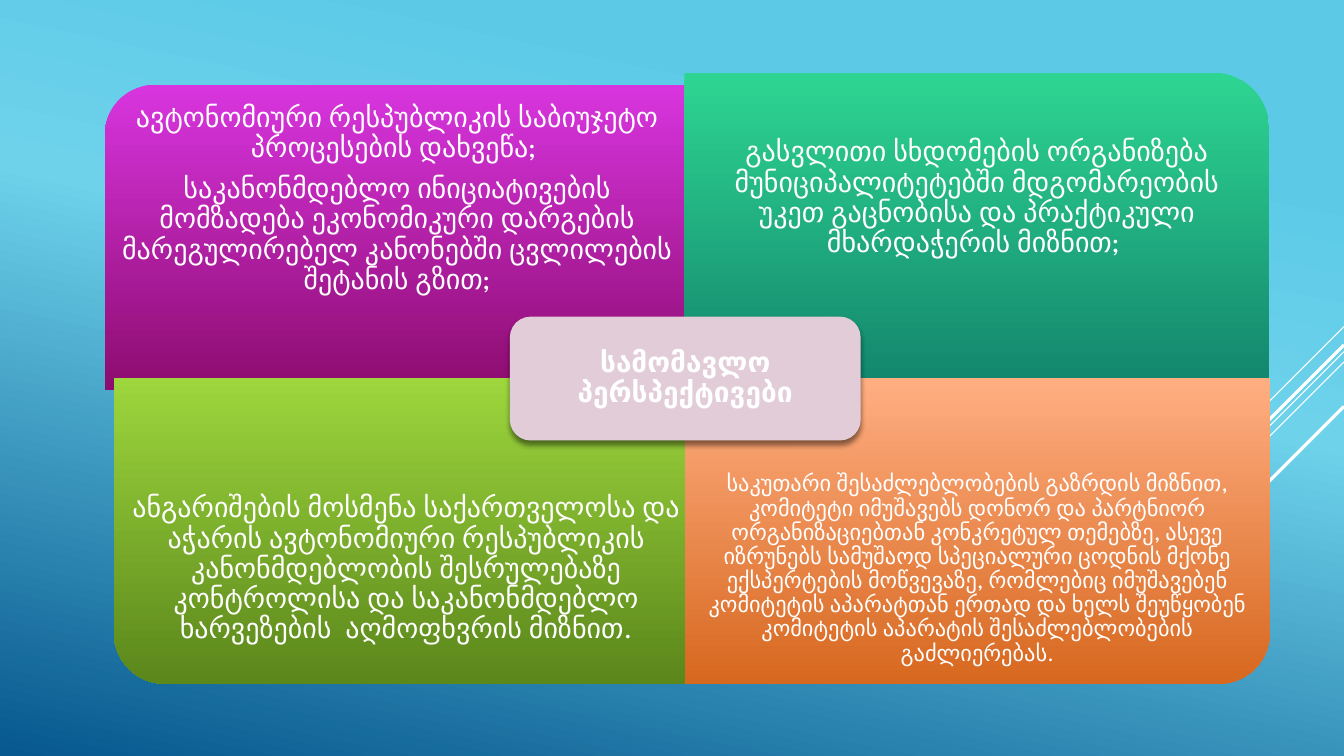
"""Build a slide with four future plans arranged around a central title."""
from copy import deepcopy

from lxml.etree import SubElement
from pptx import Presentation
from pptx.dml.color import RGBColor
from pptx.enum.shapes import MSO_CONNECTOR as Connector, MSO_SHAPE as Shape
from pptx.enum.text import MSO_ANCHOR as Anchor, PP_ALIGN as Align
from pptx.oxml.ns import qn
from pptx.util import Cm, Pt

COLOURS = {
    "white": "FFFFFF", "shadow": "000000", "hub": "E1CCD8",
    "sky": "5CCAE7", "light sky": "6ED2EB", "deep blue": "06588E",
    "magenta": "D835DF", "plum": "8D0C6F",
    "mint": "2ED592", "pine": "11806A",
    "lime": "9DD63D", "olive": "5B871B",
    "peach": "FFAE82", "rust": "D7681F",
}
BACKGROUND = [(0.18, "sky"), (0.43, "light sky"), (1, "deep blue")]
RAYS = [
    (8.23, 2.54, 0.75), (8.86, 8.28, 0.75), (9.12, 5.27, 0.75),
    (8.69, 4.85, 2.25), (10.24, 3.53, 2.25),
]
PLANS = [
    {"box": (2.64, 2.13, 14.73, 7.7), "turn": 270, "colours": ("magenta", "plum"),
     "at_bottom": False, "size": 20, "inset": 0.41, "lines": [
         "ავტონომიური რესპუბლიკის საბიუჯეტო პროცესების დახვეწა; ",
         "საკანონმდებლო ინიციატივების მომზადება ეკონომიკური დარგების "
         "მარეგულირებელ კანონებში ცვლილების შეტანის გზით;"]},
    {"box": (17.25, 1.83, 14.73, 8.43), "turn": 0, "colours": ("mint", "pine"),
     "at_bottom": False, "size": 20, "inset": 0.41, "lines": [
         "გასვლითი სხდომების ორგანიზება მუნიციპალიტეტებში მდგომარეობის "
         "უკეთ გაცნობისა და პრაქტიკული მხარდაჭერის მიზნით; "]},
    {"box": (2.87, 9.53, 14.73, 7.7), "turn": 180, "colours": ("lime", "olive"),
     "at_bottom": True, "size": 20, "inset": 0.41, "lines": [
         "ანგარიშების მოსმენა საქართველოსა და აჭარის ავტონომიური რესპუბლიკის "
         "კანონმდებლობის შესრულებაზე კონტროლისა და საკანონმდებლო "
         "ხარვეზების  აღმოფხვრის მიზნით."]},
    {"box": (17.27, 9.53, 14.73, 7.7), "turn": 90, "colours": ("peach", "rust"),
     "at_bottom": True, "size": 16, "inset": 0.31, "lines": [
         "საკუთარი შესაძლებლობების გაზრდის მიზნით, კომიტეტი იმუშავებს დონორ "
         "და პარტნიორ ორგანიზაციებთან კონკრეტულ თემებზე, ასევე იზრუნებს "
         "სამუშაოდ სპეციალური ცოდნის მქონე ექსპერტების მოწვევაზე, რომლებიც "
         "იმუშავებენ კომიტეტის აპარატთან ერთად და ხელს შეუწყობენ კომიტეტის "
         "აპარატის შესაძლებლობების გაძლიერებას."]},
]
HUB = {"box": (12.85, 7.98, 8.84, 3.12), "lines": ["სამომავლო პერსპექტივები"]}
SLIDE_WIDTH, SLIDE_HEIGHT = 33.87, 19.05
TEXT_SHARE = 0.75


def colour(name):
    return RGBColor.from_string(COLOURS[name])


def apply_format(target, values):
    for name, value in values.items():
        setattr(target, name, value)


def fill_gradient(fill, stops, angle):
    fill.gradient()
    fill.gradient_angle = angle
    first = fill.gradient_stops[0]._gs
    for _ in range(len(stops) - len(fill.gradient_stops)):
        first.addnext(deepcopy(first))
    for stop, (position, name) in zip(fill.gradient_stops, stops):
        stop.position = position
        stop.color.rgb = colour(name)


def write_text(shape, lines, size, inset, bold=False):
    frame = shape.text_frame
    margins = {f"margin_{side}": Cm(inset) for side in ("left", "right", "top", "bottom")}
    apply_format(frame, {"word_wrap": True, "vertical_anchor": Anchor.MIDDLE, **margins})
    for index, line in enumerate(lines):
        paragraph = frame.add_paragraph() if index else frame.paragraphs[0]
        apply_format(paragraph, {"alignment": Align.CENTER, "line_spacing": 0.9,
                                 "space_after": Pt(size * 0.4)})
        run = paragraph.add_run()
        run.text = line
        apply_format(run.font, {"name": "League Spartan", "size": Pt(size), "bold": bold})
        run.font.color.rgb = colour("white")


def add_ray(slide, top, run, width):
    ray = slide.shapes.add_connector(
        Connector.STRAIGHT, Cm(SLIDE_WIDTH), Cm(top), Cm(SLIDE_WIDTH - run), Cm(top + run))
    ray.line.width = Pt(width)
    ray.line.color.rgb = colour("white")
    SubElement(ray._element.spPr, qn("a:effectLst"))


def add_plan(slide, plan):
    left, top, width, height = plan["box"]
    sideways = plan["turn"] % 180 == 90
    shape_width, shape_height = (height, width) if sideways else (width, height)
    panel = slide.shapes.add_shape(
        Shape.ROUND_1_RECTANGLE,
        Cm(left + (width - shape_width) / 2), Cm(top + (height - shape_height) / 2),
        Cm(shape_width), Cm(shape_height))
    panel.rotation = plan["turn"]
    panel.shadow.inherit = False
    panel.line.fill.background()
    fill_gradient(panel.fill, list(zip((0, 1), plan["colours"])), 270)
    panel._element.spPr.find(qn("a:gradFill")).set("rotWithShape", "0")

    text_height = height * TEXT_SHARE
    text_top = top + height - text_height if plan["at_bottom"] else top
    text_box = slide.shapes.add_textbox(Cm(left), Cm(text_top), Cm(width), Cm(text_height))
    write_text(text_box, plan["lines"], plan["size"], plan["inset"])


def add_hub(slide):
    hub = slide.shapes.add_shape(Shape.ROUNDED_RECTANGLE, *map(Cm, HUB["box"]))
    hub.shadow.inherit = False
    hub.fill.solid()
    hub.fill.fore_color.rgb = colour("hub")
    hub.line.fill.background()
    effects = hub._element.spPr.find(qn("a:effectLst"))
    shadow = SubElement(effects, qn("a:outerShdw"), blurRad=str(Pt(4)), dist=str(Pt(3)),
                        dir="5400000", rotWithShape="0")
    tint = SubElement(shadow, qn("a:srgbClr"), val=COLOURS["shadow"])
    SubElement(tint, qn("a:alpha"), val="46000")
    write_text(hub, HUB["lines"], 20, 0.2, bold=True)


def main():
    presentation = Presentation()
    apply_format(presentation, {"slide_width": Cm(SLIDE_WIDTH), "slide_height": Cm(SLIDE_HEIGHT)})
    slide = presentation.slides.add_slide(presentation.slide_layouts[6])
    fill_gradient(slide.background.fill, BACKGROUND, 258)
    for ray in RAYS:
        add_ray(slide, *ray)
    for plan in PLANS:
        add_plan(slide, plan)
    add_hub(slide)
    presentation.save("out.pptx")


if __name__ == "__main__":
    main()
